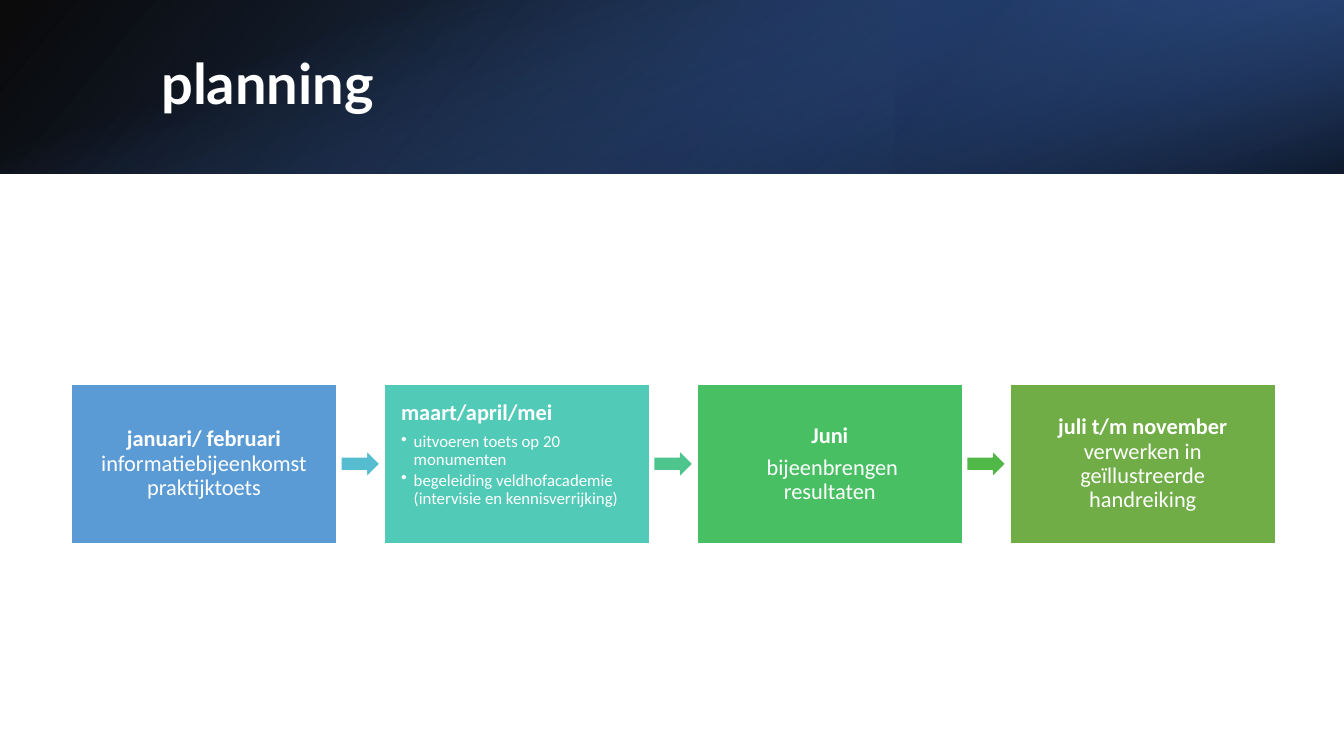
from lxml import etree
from pptx import Presentation
from pptx.dml.color import RGBColor
from pptx.enum.shapes import MSO_SHAPE
from pptx.enum.text import MSO_ANCHOR, MSO_AUTO_SIZE, PP_ALIGN
from pptx.oxml.ns import qn
from pptx.util import Pt

RECTANGLE, ARROW = MSO_SHAPE.RECTANGLE, MSO_SHAPE.RIGHT_ARROW
TOP, MIDDLE = MSO_ANCHOR.TOP, MSO_ANCHOR.MIDDLE
LEFT, CENTER = PP_ALIGN.LEFT, PP_ALIGN.CENTER
NO_AUTOFIT = MSO_AUTO_SIZE.NONE

PAGE_WIDTH, PAGE_HEIGHT = 960, 540
BANNER_HEIGHT = 124
WHITE = "FFFFFF"

# Each step: fill, anchor, paragraphs. Each paragraph: style, (text, bold) spans.
STEPS = [
    ("5B9BD5", MIDDLE, [
        ("centered", [("januari/ februari ", True),
                      ("informatiebijeenkomst praktijktoets", False)])]),
    ("52CAB8", TOP, [
        ("heading", [("maart/april/mei", True)]),
        ("bullet", [("uitvoeren toets op 20 monumenten", False)]),
        ("bullet", [("begeleiding veldhofacademie (intervisie en kennisverrijking)", False)])]),
    ("49BF64", MIDDLE, [
        ("centered", [("Juni", True)]),
        ("centered", [(" bijeenbrengen resultaten", False)])]),
    ("70AD47", MIDDLE, [
        ("centered", [("juli t/m november", True),
                      (" verwerken in geïllustreerde handreiking", False)])]),
]
ARROW_FILLS = ["56BCD0", "4DC58D", "50B846"]

# Style: alignment, font size, space after
STYLES = {
    "centered": (CENTER, 16, 5.6),
    "heading": (LEFT, 16, 5.6),
    "bullet": (LEFT, 12, 1.8),
}


def color(value):
    return RGBColor.from_string(value)


def add_block(page, kind, left, top, width, height):
    block = page.shapes.add_shape(kind, Pt(left), Pt(top), Pt(width), Pt(height))
    block.shadow.inherit = False
    return block


def add_filled_block(page, kind, box, fill):
    block = add_block(page, kind, *box)
    block.fill.solid()
    block.fill.fore_color.rgb = color(fill)
    block.line.color.rgb = color(WHITE)
    block.line.width = Pt(1)
    return block


def set_gradient(shape, stops, angle):
    """Fill with (position, colour, opacity) stops, in percent, at a clockwise angle."""
    shape.fill.background()
    properties = shape.element.spPr
    gradient = etree.Element(qn("a:gradFill"), rotWithShape="1")
    stop_list = etree.SubElement(gradient, qn("a:gsLst"))
    for position, value, opacity in stops:
        stop = etree.SubElement(stop_list, qn("a:gs"), pos=str(position * 1000))
        tint = etree.SubElement(stop, qn("a:srgbClr"), val=value)
        etree.SubElement(tint, qn("a:alpha"), val=str(opacity * 1000))
    etree.SubElement(gradient, qn("a:lin"), ang=str(angle * 60000), scaled="0")
    properties.replace(properties.find(qn("a:noFill")), gradient)


def add_banner(page, left, top, width, height):
    """Stack three gradient layers; the last one is a tall strip turned on its side."""
    third = width / 3
    shift = (width - height) / 2
    layers = [
        ((left, top, width, height), 0, True,
         [(0, "000000", 96), (100, "2F5597", 100)], 140),
        ((left + 2 * third, top, third, height), 180, True,
         [(19, "203864", 68), (100, "4472C4", 79)], 320),
        ((left + shift, top - shift, height, width), 90, False,
         [(23, "4472C4", 0), (99, "000000", 74)], 340),
    ]
    for box, rotation, flipped, stops, angle in layers:
        layer = add_block(page, RECTANGLE, *box)
        layer.line.fill.background()
        layer.rotation = rotation
        if flipped:
            layer.element.spPr.find(qn("a:xfrm")).set("flipH", "1")
        set_gradient(layer, stops, angle)


def format_span(span, font, size, bold):
    span.font.name = font
    span.font.size = Pt(size)
    span.font.bold = bold
    span.font.color.rgb = color(WHITE)


def add_title(page, text, left, top, width, height):
    title = page.shapes.title
    title.left, title.top, title.width, title.height = map(Pt, (left, top, width, height))
    frame = title.text_frame
    frame.text = text
    frame.auto_size = NO_AUTOFIT
    frame.vertical_anchor = MIDDLE
    para = frame.paragraphs[0]
    para.alignment = LEFT
    para.line_spacing = 0.9
    format_span(para.runs[0], "Lato", 40, True)
    # Bring the title in front of the banner
    title.element.getparent().append(title.element)


def add_bullet(para):
    properties = para._p.get_or_add_pPr()
    properties.set("marL", str(Pt(9)))
    properties.set("indent", str(-Pt(9)))
    etree.SubElement(properties, qn("a:buChar"), char="•")


def write_step(frame, anchor, paragraphs):
    frame.word_wrap = True
    frame.vertical_anchor = anchor
    frame.margin_left = frame.margin_right = Pt(12)
    frame.margin_top = frame.margin_bottom = Pt(12)
    for index, (style, spans) in enumerate(paragraphs):
        para = frame.add_paragraph() if index else frame.paragraphs[0]
        alignment, size, space_after = STYLES[style]
        para.alignment = alignment
        para.line_spacing = 0.9
        para.space_after = Pt(space_after)
        if style == "bullet":
            add_bullet(para)
        for text, bold in spans:
            span = para.add_run()
            span.text = text
            format_span(span, "Calibri", size, bold)


def add_process(page, left, top, width, height):
    """Spread the steps evenly over the width, with an arrow in each gap."""
    step_width = 189.5
    arrow_width, arrow_height = 28, 19.6
    pitch = (width - step_width) / (len(STEPS) - 1)
    arrow_offset = (step_width + pitch - arrow_width) / 2
    arrow_top = top + (height - arrow_height) / 2
    for index, (fill, anchor, paragraphs) in enumerate(STEPS):
        step_left = left + index * pitch
        step = add_filled_block(page, RECTANGLE, (step_left, top, step_width, height), fill)
        write_step(step.text_frame, anchor, paragraphs)
        if index < len(ARROW_FILLS):
            box = (step_left + arrow_offset, arrow_top, arrow_width, arrow_height)
            add_filled_block(page, ARROW, box, ARROW_FILLS[index])


def main():
    deck = Presentation()
    deck.slide_width, deck.slide_height = Pt(PAGE_WIDTH), Pt(PAGE_HEIGHT)
    page = deck.slides.add_slide(deck.slide_layouts[5])
    add_banner(page, 0, 0, PAGE_WIDTH, BANNER_HEIGHT)
    add_title(page, "planning", 108, 27.5, 790.5, 69)
    add_process(page, 51, 274.5, 860, 113.7)
    deck.save("out.pptx")


if __name__ == "__main__":
    main()
